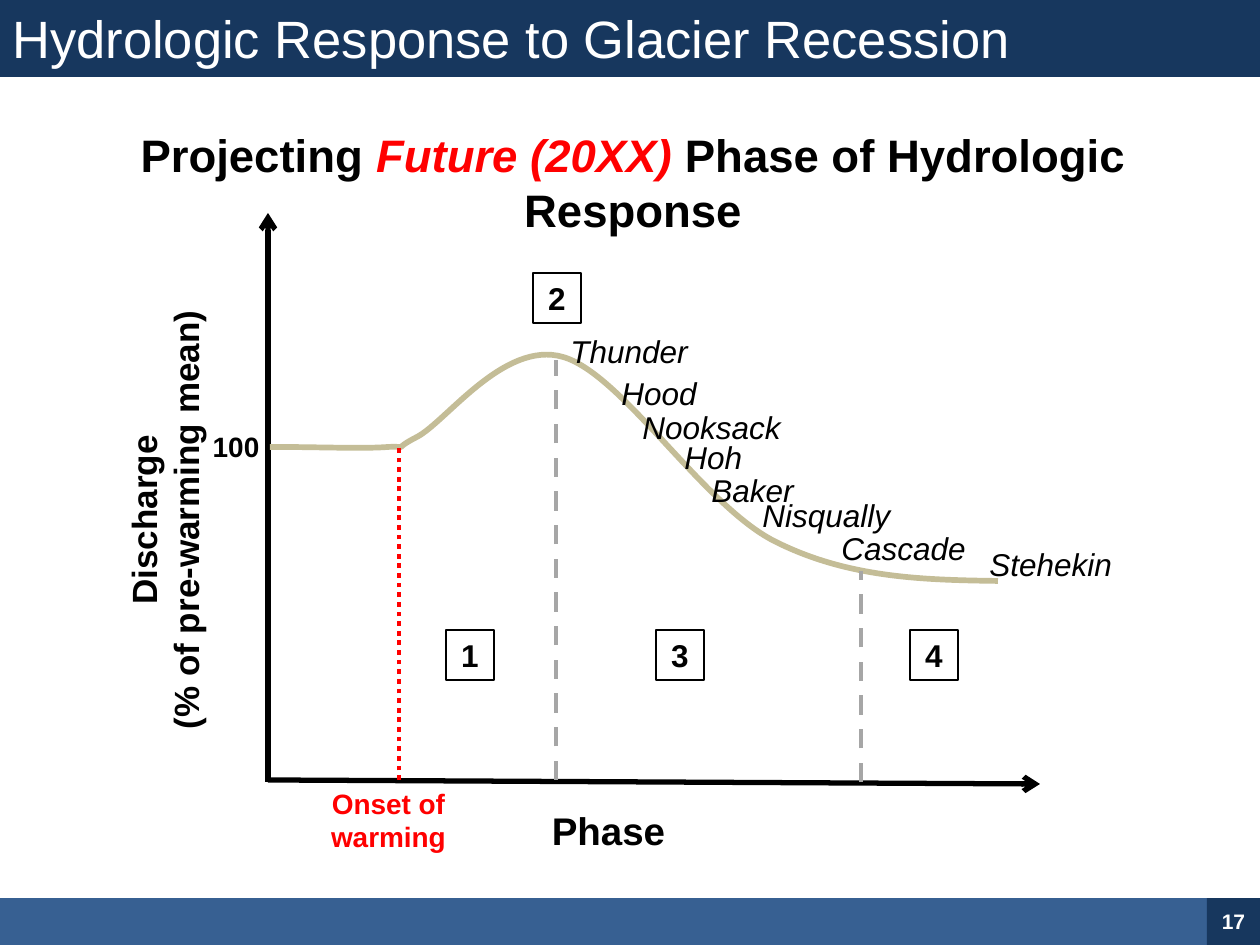
from lxml import etree
from pptx import Presentation
from pptx.dml.color import RGBColor
from pptx.enum.dml import MSO_LINE
from pptx.enum.shapes import MSO_CONNECTOR, MSO_SHAPE
from pptx.enum.text import MSO_ANCHOR, MSO_AUTO_SIZE, PP_ALIGN
from pptx.oxml.ns import qn
from pptx.util import Pt

PX = 914400 / 126
FONT = "Arial"
LEFT, CENTER = PP_ALIGN.LEFT, PP_ALIGN.CENTER
TOP, MIDDLE = MSO_ANCHOR.TOP, MSO_ANCHOR.MIDDLE
GROW, FIXED = MSO_AUTO_SIZE.SHAPE_TO_FIT_TEXT, MSO_AUTO_SIZE.NONE
DASH, DOT = MSO_LINE.DASH, MSO_LINE.ROUND_DOT
RECTANGLE, STRAIGHT = MSO_SHAPE.RECTANGLE, MSO_CONNECTOR.STRAIGHT

NAVY, BLUE, TAN, GRAY = "17375E", "376092", "C4BD97", "A6A6A6"
BLACK, WHITE, RED = "000000", "FFFFFF", "FF0000"


def px(*lengths):
    return [round(length * PX) for length in lengths]


def color(value):
    return RGBColor.from_string(value)


class Page:
    def __init__(self, slide):
        self.shapes = slide.shapes

    def label(self, shape, lines, size, ink=BLACK, bold=False, italic=False,
              align=CENTER, anchor=TOP, fit=GROW):
        frame = shape.text_frame
        frame.word_wrap = True
        frame.auto_size = fit
        frame.vertical_anchor = anchor
        for index, line in enumerate(lines):
            paragraph = frame.paragraphs[0] if index == 0 else frame.add_paragraph()
            paragraph.text = line
            paragraph.alignment = align
            font = paragraph.font
            font.name, font.size = FONT, Pt(size)
            font.bold, font.italic = bold, italic
            font.color.rgb = color(ink)
        return frame

    def text(self, box, lines, size, **style):
        return self.label(self.shapes.add_textbox(*px(*box)), lines, size, **style)

    def rect(self, box, fill=None, outline=None):
        shape = self.shapes.add_shape(RECTANGLE, *px(*box))
        shape.shadow.inherit = False
        if fill:
            shape.fill.solid()
            shape.fill.fore_color.rgb = color(fill)
        else:
            shape.fill.background()
        if outline:
            shape.line.color.rgb = color(outline)
            shape.line.width = Pt(0.75)
        else:
            shape.line.fill.background()
        return shape

    def line(self, start, end, ink, width, dash=None, arrow=False):
        connector = self.shapes.add_connector(STRAIGHT, *px(*start, *end))
        connector.line.color.rgb = color(ink)
        connector.line.width = Pt(width)
        if dash:
            connector.line.dash_style = dash
        properties = connector._element.spPr
        if arrow:
            etree.SubElement(properties.find(qn("a:ln")), qn("a:tailEnd"), type="arrow")
        etree.SubElement(properties, qn("a:effectLst"))

    def curve(self, start, controls, ink, width):
        builder = self.shapes.build_freeform(*start, scale=PX)
        builder.add_line_segments(controls, close=False)
        shape = builder.convert_to_shape()
        segments = list(shape._element.iter(qn("a:lnTo")))
        for first in range(0, len(segments), 3):
            triple = segments[first:first + 3]
            bezier = etree.Element(qn("a:cubicBezTo"))
            triple[0].addprevious(bezier)
            for segment in triple:
                bezier.append(segment[0])
                segment.getparent().remove(segment)
        shape.shadow.inherit = False
        shape.fill.background()
        shape.line.color.rgb = color(ink)
        shape.line.width = Pt(width)


def main():
    deck = Presentation()
    deck.slide_width, deck.slide_height = px(1260, 945)
    page = Page(deck.slides.add_slide(deck.slide_layouts[6]))

    title_bar = page.rect((0, 0, 1260, 77), NAVY)
    page.label(title_bar, ["Hydrologic Response to Glacier Recession"], 30,
               ink=WHITE, align=LEFT)
    page.rect((0, 898, 1207, 47), BLUE)
    page_number = page.rect((1207, 898, 53, 47), NAVY)
    page.label(page_number, ["17"], 12, ink=WHITE, bold=True, anchor=MIDDLE, fit=FIXED)

    heading = page.text((58, 121, 1150, 123), ["Projecting "], 26, bold=True).paragraphs[0]
    future = heading.add_run()
    future.text = "Future (20XX) "
    future.font.italic = True
    future.font.color.rgb = color(RED)
    heading.add_run().text = "Phase of Hydrologic Response"

    page.line((268, 782), (268, 213), BLACK, 3, arrow=True)
    page.line((268, 780), (1040, 784), BLACK, 3, arrow=True)
    page.curve((270, 447), [
        (318, 447), (364, 449), (389, 447),
        (413, 446), (388, 452), (417, 437),
        (446, 422), (504, 340), (563, 357),
        (622, 374), (702, 504), (774, 541),
        (847, 578), (922, 580), (998, 581),
    ], TAN, 3.25)
    page.line((399, 780), (399, 445), RED, 2.75, dash=DOT)
    page.line((556, 780), (556, 360), GRAY, 2.75, dash=DASH)
    page.line((861, 782), (861, 571), GRAY, 2.75, dash=DASH)

    discharge = page.text((116, 256, 111, 528),
                          ["Discharge", "(% of pre-warming mean)"], 20, bold=True)
    discharge._txBody.bodyPr.set("vert", "vert270")
    page.text((307, 780, 163, 81), ["Onset of warming"], 16, ink=RED, bold=True)
    page.text((168, 423, 136, 47), ["100"], 16, bold=True)
    page.text((514, 801, 189, 59), ["Phase"], 22, bold=True)

    for glacier, left, top, width in [
        ("Hoh", 672, 432, 95),
        ("Stehekin", 977, 539, 194),
        ("Thunder", 558, 326, 158),
        ("Cascade", 829, 523, 199),
        ("Baker", 699, 465, 199),
        ("Nisqually", 750, 490, 199),
        ("Nooksack", 630, 402, 194),
        ("Hood", 609, 368, 199),
    ]:
        page.text((left, top, width, 50), [glacier], 18, italic=True, align=LEFT)

    phase_corners = [(446, 630), (533, 273), (656, 630), (910, 630)]
    for phase, (left, top) in enumerate(phase_corners, 1):
        phase_box = page.rect((left, top, 48, 50), outline=BLACK)
        page.label(phase_box, [str(phase)], 18, bold=True)

    deck.save("out.pptx")


if __name__ == "__main__":
    main()
